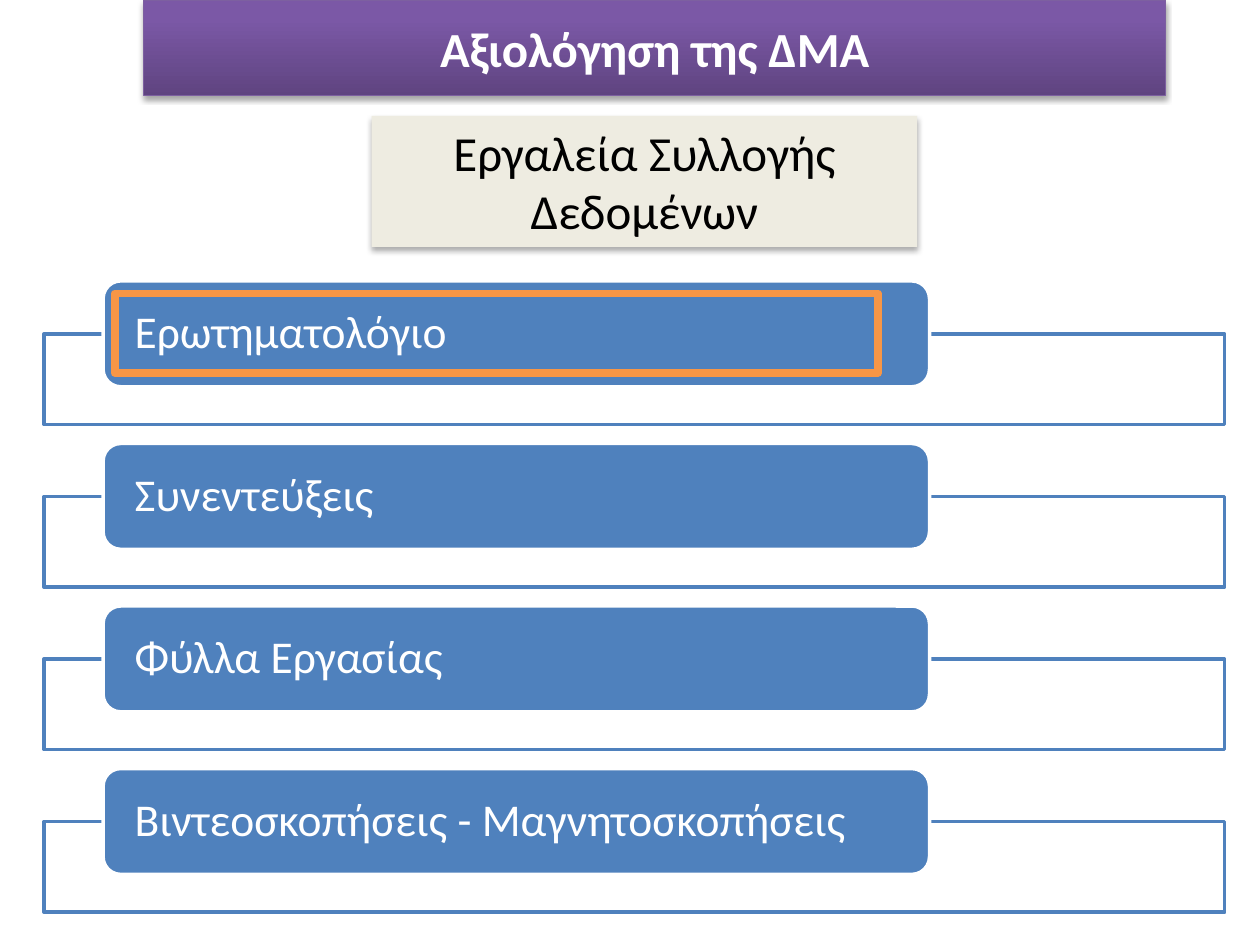
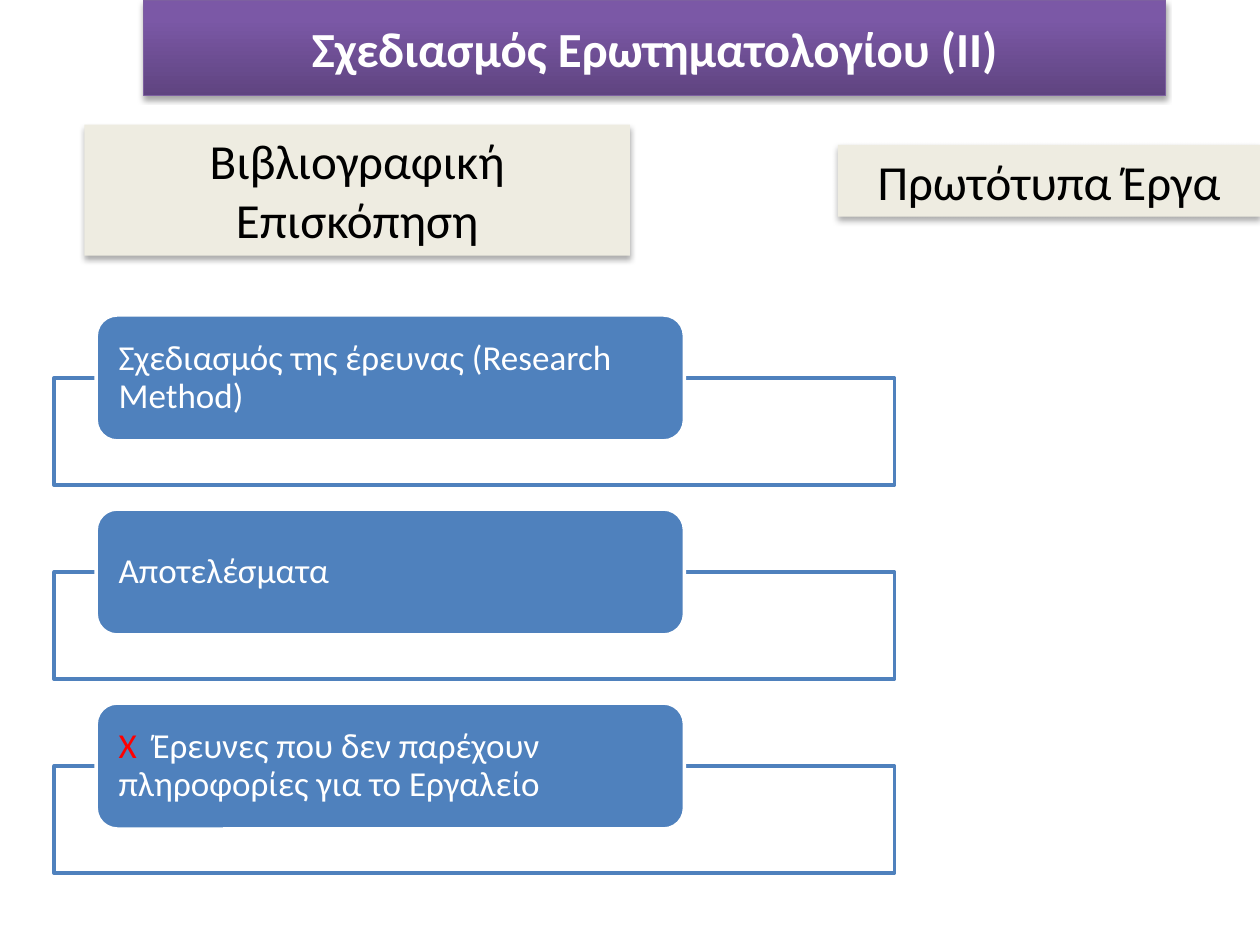
from copy import deepcopy

from lxml.etree import SubElement
from pptx import Presentation
from pptx.dml.color import RGBColor
from pptx.enum.shapes import MSO_SHAPE as Shape
from pptx.enum.text import MSO_ANCHOR as Anchor, MSO_AUTO_SIZE as AutoSize, PP_ALIGN as Align
from pptx.oxml.ns import qn
from pptx.util import Inches, Pt

FONT = "Calibri"
WHITE = RGBColor(0xFF, 0xFF, 0xFF)
BLACK = RGBColor(0, 0, 0)
RED = RGBColor(0xFF, 0, 0)
BLUE = RGBColor(0x4F, 0x81, 0xBD)
ORANGE = RGBColor(0xF7, 0x96, 0x46)
CREAM = RGBColor(0xEE, 0xEC, 0xE1)
PURPLE_LINE = RGBColor(0x7D, 0x60, 0xA0)
PURPLE_STOPS = [
    (0, RGBColor(0x5F, 0x44, 0x80)),
    (0.8, RGBColor(0x7B, 0x58, 0xA6)),
    (1, RGBColor(0x7C, 0x57, 0xA8)),
]

TITLE_BOX = (1.14, 0, 8.11, 0.76)
TITLE_ONLY_LAYOUT = 5


def write(shape, text, size=28, color=BLACK, bold=False, align=Align.CENTER,
          anchor=Anchor.MIDDLE, line_spacing=None, insets=None):
    """Put text in a shape; text is a string or a list of (string, color, tracking)."""
    frame = shape.text_frame
    frame.word_wrap = True
    frame.vertical_anchor = anchor
    if insets:
        frame.margin_left, frame.margin_top, frame.margin_right, frame.margin_bottom = map(Inches, insets)
    paragraph = frame.paragraphs[0]
    paragraph.alignment = align
    paragraph.line_spacing = line_spacing
    pieces = [(text, color, 0)] if isinstance(text, str) else text
    for words, piece_color, tracking in pieces:
        run = paragraph.add_run()
        run.text = words
        run.font.name, run.font.size, run.font.bold = FONT, Pt(size), bold
        run.font.color.rgb = piece_color
        if tracking:
            run.font._element.set("spc", str(int(tracking * 100)))


def draw(shapes, kind, box, fill=None, line=None, line_width=2):
    shape = shapes.add_shape(kind, *map(Inches, box))
    shape.shadow.inherit = False
    if fill is None:
        shape.fill.background()
    else:
        shape.fill.solid()
        shape.fill.fore_color.rgb = fill
    if line is None:
        shape.line.fill.background()
    else:
        shape.line.color.rgb = line
        shape.line.width = Pt(line_width)
    return shape


def cast_shadow(shape, blur, distance, opacity):
    """Give a shape a soft black shadow straight below it."""
    shape.shadow.inherit = False
    effects = shape._element.spPr.find(qn("a:effectLst"))
    shadow = SubElement(effects, qn("a:outerShdw"), blurRad=str(Pt(blur)), dist=str(Pt(distance)),
                        dir="5400000", rotWithShape="0")
    black = SubElement(shadow, qn("a:srgbClr"), val=str(BLACK))
    SubElement(black, qn("a:alpha"), val=str(opacity * 1000))


def add_title_band(slide, text):
    title = slide.shapes.title
    title.left, title.top, title.width, title.height = map(Inches, TITLE_BOX)
    title.fill.gradient()
    title.fill.gradient_angle = 90
    stop_list = title._element.spPr.find(".//" + qn("a:gsLst"))
    stop_list.append(deepcopy(stop_list[-1]))
    for stop, (position, color) in zip(title.fill.gradient_stops, PURPLE_STOPS):
        stop.position = position
        stop.color.rgb = color
    title.line.color.rgb = PURPLE_LINE
    title.line.width = Pt(0.75)
    cast_shadow(title, blur=3.1, distance=1.8, opacity=35)
    write(title, text, color=WHITE, bold=True)


def add_caption(slide, text, box):
    caption = draw(slide.shapes, Shape.RECTANGLE, box, fill=CREAM)
    cast_shadow(caption, blur=3.5, distance=2.2, opacity=32)
    write(caption, text, anchor=Anchor.TOP)
    caption.text_frame.auto_size = AutoSize.SHAPE_TO_FIT_TEXT


def add_topic_list(slide, topics, box, pitch, label_height, size, inset):
    """Stack labels over outlined frames; box is left, top, width and frame height."""
    left, top, width, frame_height = box
    label_left, label_width = left + 0.05 * width, 0.7 * width
    group = slide.shapes.add_group_shape()
    for row, topic in enumerate(topics):
        label_top = top + row * pitch
        frame = draw(group.shapes, Shape.RECTANGLE,
                     (left, label_top + label_height / 2, width, frame_height), WHITE, BLUE)
        fill_color = frame._element.spPr.find(qn("a:solidFill"))[0]
        SubElement(fill_color, qn("a:alpha"), val="90000")
        label = draw(group.shapes, Shape.ROUNDED_RECTANGLE,
                     (label_left, label_top, label_width, label_height), BLUE, WHITE)
        write(label, topic, size=size, color=WHITE, align=Align.LEFT, line_spacing=0.9,
              insets=(inset, 0, inset, 0))


def new_slide(deck, title):
    slide = deck.slides.add_slide(deck.slide_layouts[TITLE_ONLY_LAYOUT])
    add_title_band(slide, title)
    return slide


def build_tools_slide(deck):
    slide = new_slide(deck, "Αξιολόγηση της ΔΜΑ")
    add_caption(slide, "Εργαλεία Συλλογής Δεδομένων", (2.95, 0.92, 4.33, 1.04))
    tools = ["Ερωτηματολόγιο", "Συνεντεύξεις", "Φύλλα Εργασίας",
             "Βιντεοσκοπήσεις - Μαγνητοσκοπήσεις"]
    add_topic_list(slide, tools, (0.35, 2.23, 9.37, 0.72), pitch=1.29, label_height=0.84,
                   size=26, inset=0.21)
    draw(slide.shapes, Shape.RECTANGLE, (0.91, 2.33, 6.06, 0.63), line=ORANGE, line_width=4.5)


def build_questionnaire_slide(deck):
    slide = new_slide(deck, "Σχεδιασμός Ερωτηματολογίου (ΙΙ)")
    add_caption(slide, "Βιβλιογραφική Επισκόπηση", (0.67, 0.99, 4.33, 1.04))
    excluded = [("Χ ", RED, 2.25),
                ("Έρευνες που δεν παρέχουν πληροφορίες για το Εργαλείο", WHITE, 0)]
    topics = ["Σχεδιασμός της έρευνας (Research Method)", "Αποτελέσματα", excluded]
    add_topic_list(slide, topics, (0.43, 2.5, 6.67, 0.85), pitch=1.54, label_height=1,
                   size=20, inset=0.13)
    add_caption(slide, "Πρωτότυπα Έργα", (6.65, 1.15, 3.35, 0.57))


def main():
    deck = Presentation()
    deck.slide_width, deck.slide_height = Inches(10), Inches(7.5)
    build_tools_slide(deck)
    build_questionnaire_slide(deck)
    deck.save("out.pptx")


if __name__ == "__main__":
    main()
